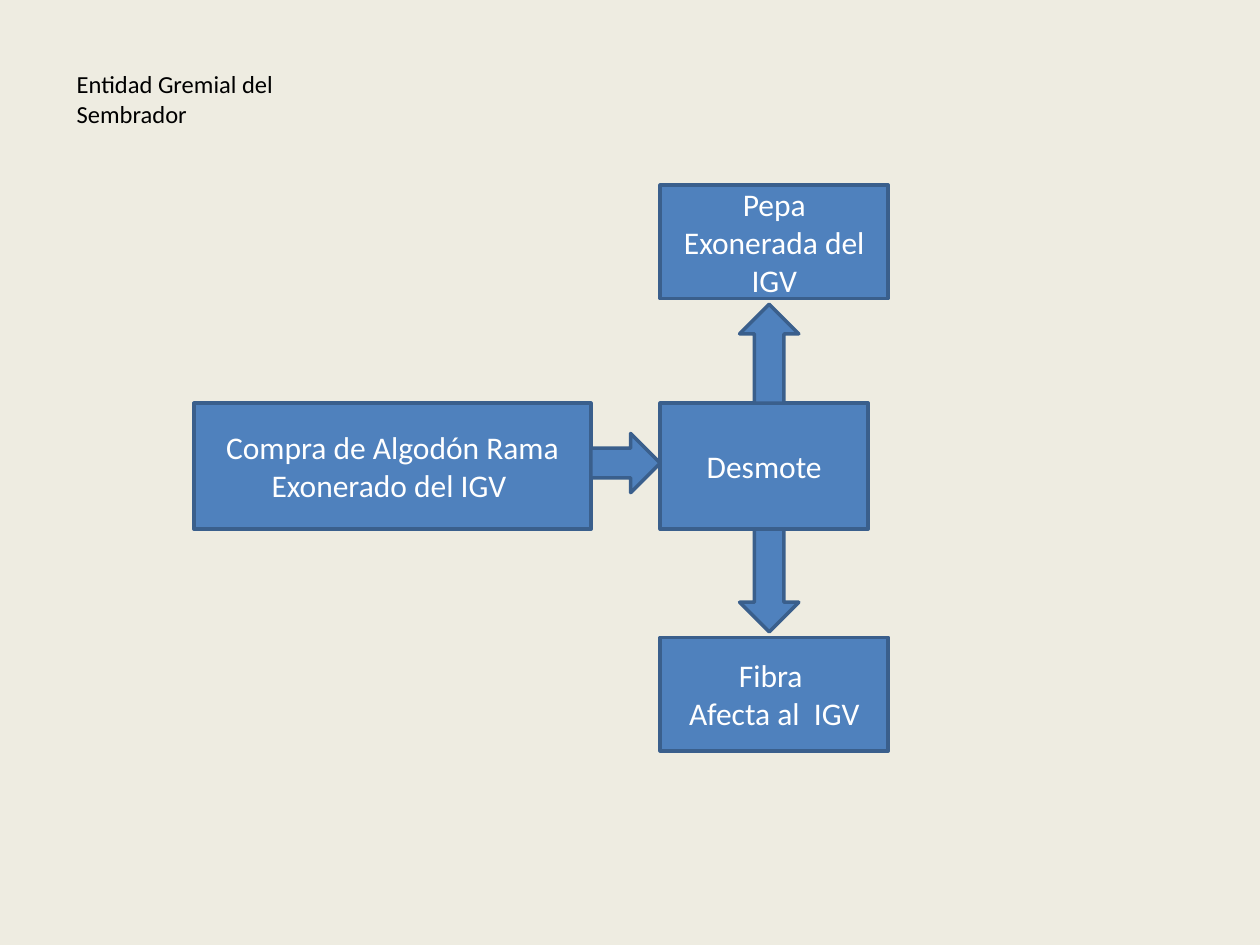
from collections import namedtuple

from pptx import Presentation
from pptx.dml.color import RGBColor
from pptx.enum.shapes import MSO_SHAPE as Shape
from pptx.enum.text import MSO_ANCHOR as Anchor, MSO_AUTO_SIZE as AutoSize, PP_ALIGN as Align
from pptx.util import Inches, Pt

COLORS = {
    "background": "EEECE1",
    "fill": "4F81BD",
    "outline": "3A5F8C",
    "label": "FFFFFF",
    "heading": "000000",
}
COLUMNS, ROWS = 100, 75
PAGE_WIDTH, PAGE_HEIGHT = Inches(10), Inches(7.5)

Box = namedtuple("Box", "left top width height")


def color(name):
    """Return the named palette colour."""
    return RGBColor.from_string(COLORS[name])


def place(box):
    """Turn grid columns and rows into slide lengths."""
    column, row = PAGE_WIDTH / COLUMNS, PAGE_HEIGHT / ROWS
    return [round(cells * unit) for cells, unit in zip(box, (column, row, column, row))]


def write(frame, lines, size, ink, align):
    """Write one paragraph per line in a single style."""
    for index, line in enumerate(lines):
        para = frame.paragraphs[0] if index == 0 else frame.add_paragraph()
        para.text = line
        para.alignment = align
        para.font.name = "Calibri"
        para.font.size = Pt(size)
        para.font.color.rgb = color(ink)


def add_block(page, kind, box, lines=()):
    """Add an outlined shape with centred text."""
    block = page.shapes.add_shape(kind, *place(box))
    block.shadow.inherit = False
    block.fill.solid()
    block.fill.fore_color.rgb = color("fill")
    block.line.color.rgb = color("outline")
    block.line.width = Pt(2)
    block.text_frame.word_wrap = True
    block.text_frame.vertical_anchor = Anchor.MIDDLE
    write(block.text_frame, lines, 18, "label", Align.CENTER)


def add_heading(page, box):
    """Add the institute's name."""
    frame = page.shapes.add_textbox(*place(box)).text_frame
    frame.word_wrap = False
    frame.auto_size = AutoSize.SHAPE_TO_FIT_TEXT
    write(frame, ["Entidad Gremial del Sembrador"], 14, "heading", Align.LEFT)


def add_cotton_flow(page, box):
    """Add the purchase, the ginning and its two products."""
    arrow, product_height, stage_height = 4.7, 9, 10
    purchase = Box(box.left, box.top + 17.3, 31.5, stage_height)
    purchase_end = purchase.left + purchase.width
    ginning = Box(purchase_end + 5.5, purchase.top, 16.5, stage_height)
    ginning_end = ginning.top + ginning.height
    product_width = box.left + box.width - ginning.left
    seed = Box(ginning.left, box.top, product_width, product_height)
    fibre = seed._replace(top=box.top + box.height - product_height)
    seed_end = seed.top + seed.height
    arrow_left = ginning.left + 6.3
    gap = 0.45

    add_block(page, Shape.RECTANGLE, purchase, ["Compra de Algodón Rama", "Exonerado del IGV "])
    add_block(page, Shape.RIGHT_ARROW,
              Box(purchase_end, purchase.top + 2.4, ginning.left - purchase_end, arrow))
    add_block(page, Shape.RECTANGLE, ginning, ["Desmote"])
    add_block(page, Shape.UP_ARROW,
              Box(arrow_left, seed_end + gap, arrow, ginning.top - seed_end - gap))
    add_block(page, Shape.DOWN_ARROW,
              Box(arrow_left, ginning_end, arrow, fibre.top - gap - ginning_end))
    add_block(page, Shape.RECTANGLE, seed, ["Pepa Exonerada del IGV"])
    add_block(page, Shape.RECTANGLE, fibre, ["Fibra ", "Afecta al  IGV"])


def main():
    """Build and save the deck."""
    deck = Presentation()
    deck.slide_width, deck.slide_height = PAGE_WIDTH, PAGE_HEIGHT
    page = deck.slides.add_slide(deck.slide_layouts[6])
    page.background.fill.solid()
    page.background.fill.fore_color.rgb = color("background")
    add_heading(page, Box(5.1, 5, 25.9, 3.4))
    add_cotton_flow(page, Box(15.4, 14.7, 55.1, 44.9))
    deck.save("out.pptx")


if __name__ == "__main__":
    main()
